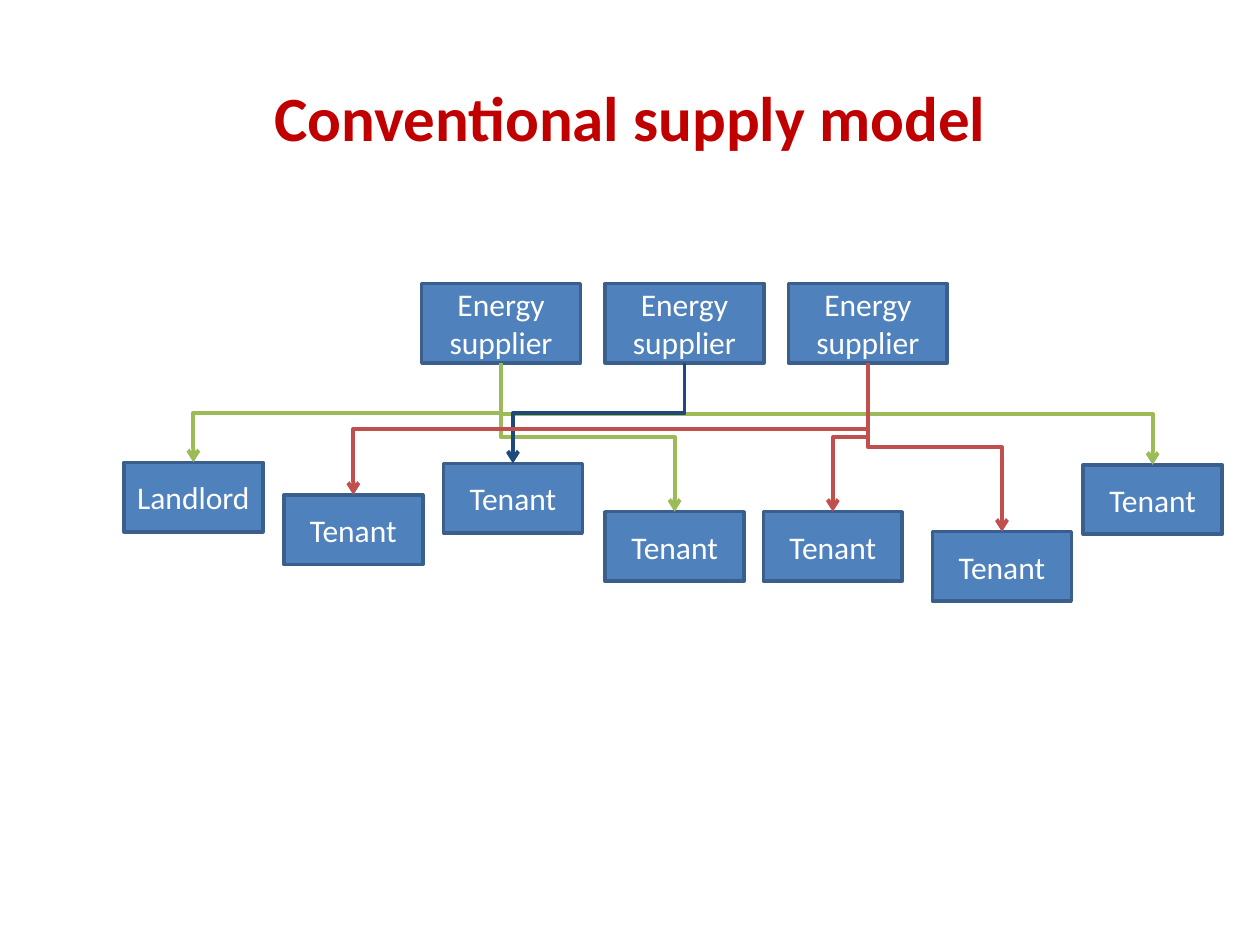
from lxml import etree
from pptx import Presentation
from pptx.dml.color import RGBColor
from pptx.enum import shapes, text
from pptx.oxml.ns import qn
from pptx.util import Pt

WHITE = RGBColor(0xFF, 0xFF, 0xFF)
TITLE = RGBColor(0xC0, 0x00, 0x00)
FILL = RGBColor(0x4F, 0x81, 0xBD)
EDGE = RGBColor(0x3A, 0x5F, 0x8C)
GREEN = RGBColor(0x9B, 0xBB, 0x59)
NAVY = RGBColor(0x1F, 0x49, 0x7D)
RED = RGBColor(0xC0, 0x50, 0x4D)


def write(shape, words, size=18, color=WHITE, bold=False):
    frame = shape.text_frame
    frame.word_wrap = True
    frame.vertical_anchor = text.MSO_ANCHOR.MIDDLE
    para = frame.paragraphs[0]
    para.alignment = text.PP_ALIGN.CENTER
    run = para.add_run()
    run.text = words
    run.font.name = "Calibri"
    run.font.size = Pt(size)
    run.font.bold = bold
    run.font.color.rgb = color


def link(start, end, color):
    """Draw an elbow arrow from the bottom of start to the top of end."""
    line = slide.shapes.add_connector(shapes.MSO_CONNECTOR.ELBOW, 0, 0, 0, 0)
    line.begin_connect(start, 2)
    line.end_connect(end, 0)
    x1, y1 = start.left + start.width // 2, start.top + start.height
    x2, y2 = end.left + end.width // 2, end.top
    # The preset leaves sideways, so a quarter turn makes it leave downwards.
    wide, high = y2 - y1, abs(x2 - x1)
    line.left, line.top = (x1 + x2 - wide) // 2, (y1 + y2 - high) // 2
    line.width, line.height = wide, high
    right = x2 > x1
    props = line._element.spPr
    turn = props.find(qn("a:xfrm"))
    turn.set("rot", str((270 if right else 90) * 60000))
    turn.set("flipH", "1" if right else "0")
    turn.set("flipV", "0")
    line.line.color.rgb = color
    line.line.width = Pt(2.25)
    etree.SubElement(props.find(qn("a:ln")), qn("a:tailEnd"), type="arrow")
    etree.SubElement(props, qn("a:effectLst"))


deck = Presentation()
deck.slide_width, deck.slide_height = Pt(720), Pt(540)
slide = deck.slides.add_slide(deck.slide_layouts[6])

title = slide.shapes.add_textbox(Pt(36), Pt(21.6), Pt(648), Pt(90))
write(title, "Conventional supply model", size=36, color=TITLE, bold=True)

# Name, left, top, width, height
makers = [("Energy supplier", x, 162, 90.7, 45.4) for x in (241, 345.8, 450.6)]
users = [
    ("Landlord" if x < 100 else "Tenant", x, y, 79.4, 39.7)
    for x, y in (
        (70.8, 264.2), (162.2, 282.8), (253.4, 264.8), (345.8, 292.4),
        (436.2, 292.4), (532.8, 303.8), (619, 265.6),
    )
]

boxes = []
for name, *place in makers + users:
    box = slide.shapes.add_shape(
        shapes.MSO_SHAPE.RECTANGLE, *[Pt(n) for n in place]
    )
    box.shadow.inherit = False
    box.fill.solid()
    box.fill.fore_color.rgb = FILL
    box.line.color.rgb = EDGE
    box.line.width = Pt(2)
    write(box, name)
    boxes.append(box)

sources, sinks = boxes[:3], boxes[3:]
routes = [
    (0, GREEN, (0, 3, 6)),
    (1, NAVY, (2,)),
    (2, RED, (5, 4, 1)),
]
for source, color, ends in routes:
    for end in ends:
        link(sources[source], sinks[end], color)

deck.save("out.pptx")
